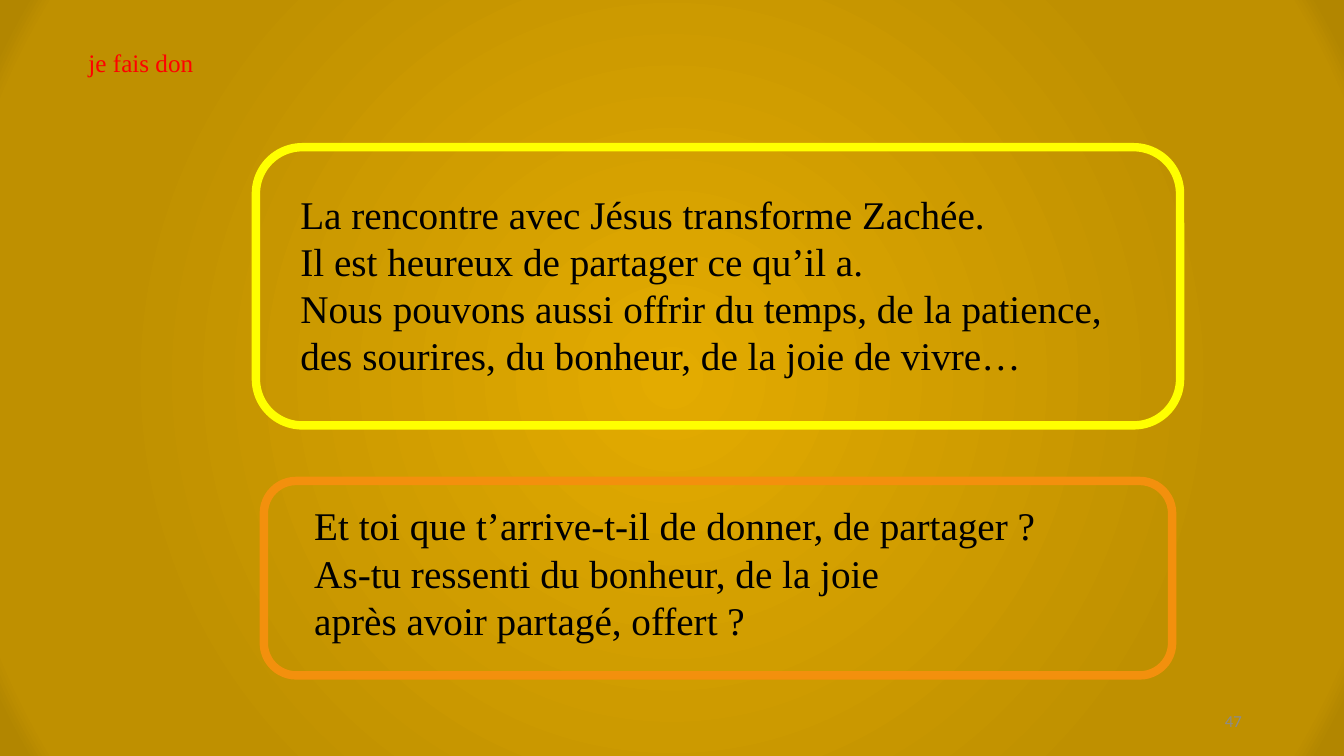
from pptx import Presentation
from pptx.dml.color import RGBColor
from pptx.enum.shapes import MSO_SHAPE
from pptx.enum.text import MSO_ANCHOR, MSO_AUTO_SIZE, PP_ALIGN
from pptx.oxml import parse_xml
from pptx.oxml.ns import nsdecls, qn
from pptx.util import Cm, Pt

SERIF = "Times New Roman"
# position in %, colour, opacity in %
GRADIENT = [(0, "E3AB00", 100), (73, "BF9000", 36), (94, "BF9000", 100), (97, "B28600", 100)]

# Boxes are left, top, width, height in cm; each paragraph is a list of lines.
TITLE = ([["je fais don"]], (1.98, 1.07, 3.43, 1.02))
PAGE_NUMBER = ([["47"]], (23.93, 17.65, 7.62, 1.02))
PANELS = [
    {
        "frame": (6.45, 3.71, 23.29, 7.01),
        "color": "FFFF00",
        "text_box": (7.32, 4.67, 21.36, 5.05),
        "paragraphs": [
            ["La rencontre avec Jésus transforme Zachée."],
            ["Il est heureux de partager ce qu’il a."],
            ["Nous pouvons aussi offrir du temps, de la patience, ",
             "des sourires, du bonheur, de la joie de vivre…"],
        ],
    },
    {
        "frame": (6.65, 12.12, 22.89, 4.9),
        "color": "F3900D",
        "text_box": (7.67, 12.52, 19.71, 3.84),
        "paragraphs": [
            ["Et toi que t’arrive-t-il de donner, de partager ?"],
            ["As-tu ressenti du bonheur, de la joie ",
             "après avoir partagé, offert ?"],
        ],
    },
]


def rgb(color):
    return RGBColor.from_string(color)


def set_background(slide):
    """Fill the slide with a circular gradient spreading from its centre."""
    stops = "".join(
        f'<a:gs pos="{pos * 1000}"><a:srgbClr val="{color}">'
        f'<a:alpha val="{opacity * 1000}"/></a:srgbClr></a:gs>'
        for pos, color, opacity in GRADIENT)
    bg = parse_xml(
        f'<p:bg {nsdecls("p", "a")}><p:bgPr><a:gradFill rotWithShape="1">'
        f'<a:gsLst>{stops}</a:gsLst><a:path path="circle">'
        '<a:fillToRect l="50000" t="50000" r="50000" b="50000"/></a:path>'
        '</a:gradFill><a:effectLst/></p:bgPr></p:bg>')
    slide.element.find(qn("p:cSld")).insert(0, bg)


def add_text(shapes, paragraphs, box, size, color, font=SERIF, align=PP_ALIGN.LEFT):
    tf = shapes.add_textbox(*map(Cm, box)).text_frame
    tf.word_wrap = True
    for i, lines in enumerate(paragraphs):
        p = tf.add_paragraph() if i else tf.paragraphs[0]
        p.alignment = align
        for j, line in enumerate(lines):
            if j:
                p.add_line_break()
            r = p.add_run()
            r.text = line
            r.font.name = font
            r.font.size = Pt(size)
            r.font.color.rgb = rgb(color)
    return tf


def add_panel(slide, panel):
    """Group a rounded outline with the text inside it."""
    shapes = slide.shapes.add_group_shape().shapes
    sp = shapes.add_shape(MSO_SHAPE.ROUNDED_RECTANGLE, *map(Cm, panel["frame"]))
    sp.shadow.inherit = False
    sp.fill.background()
    sp.line.color.rgb = rgb(panel["color"])
    sp.line.width = Pt(6)
    tf = add_text(shapes, panel["paragraphs"], panel["text_box"], 28, "000000")
    tf.auto_size = MSO_AUTO_SIZE.SHAPE_TO_FIT_TEXT


def main():
    prs = Presentation()
    prs.slide_width, prs.slide_height = Cm(33.87), Cm(19.05)
    slide = prs.slides.add_slide(prs.slide_layouts[6])
    set_background(slide)
    tf = add_text(slide.shapes, *PAGE_NUMBER, 12, "8C8C8C", "Calibri", PP_ALIGN.RIGHT)
    tf.vertical_anchor = MSO_ANCHOR.MIDDLE
    tf = add_text(slide.shapes, *TITLE, 18, "FF0000")
    tf.auto_size = MSO_AUTO_SIZE.SHAPE_TO_FIT_TEXT
    for panel in PANELS:
        add_panel(slide, panel)
    prs.save("out.pptx")


if __name__ == "__main__":
    main()
